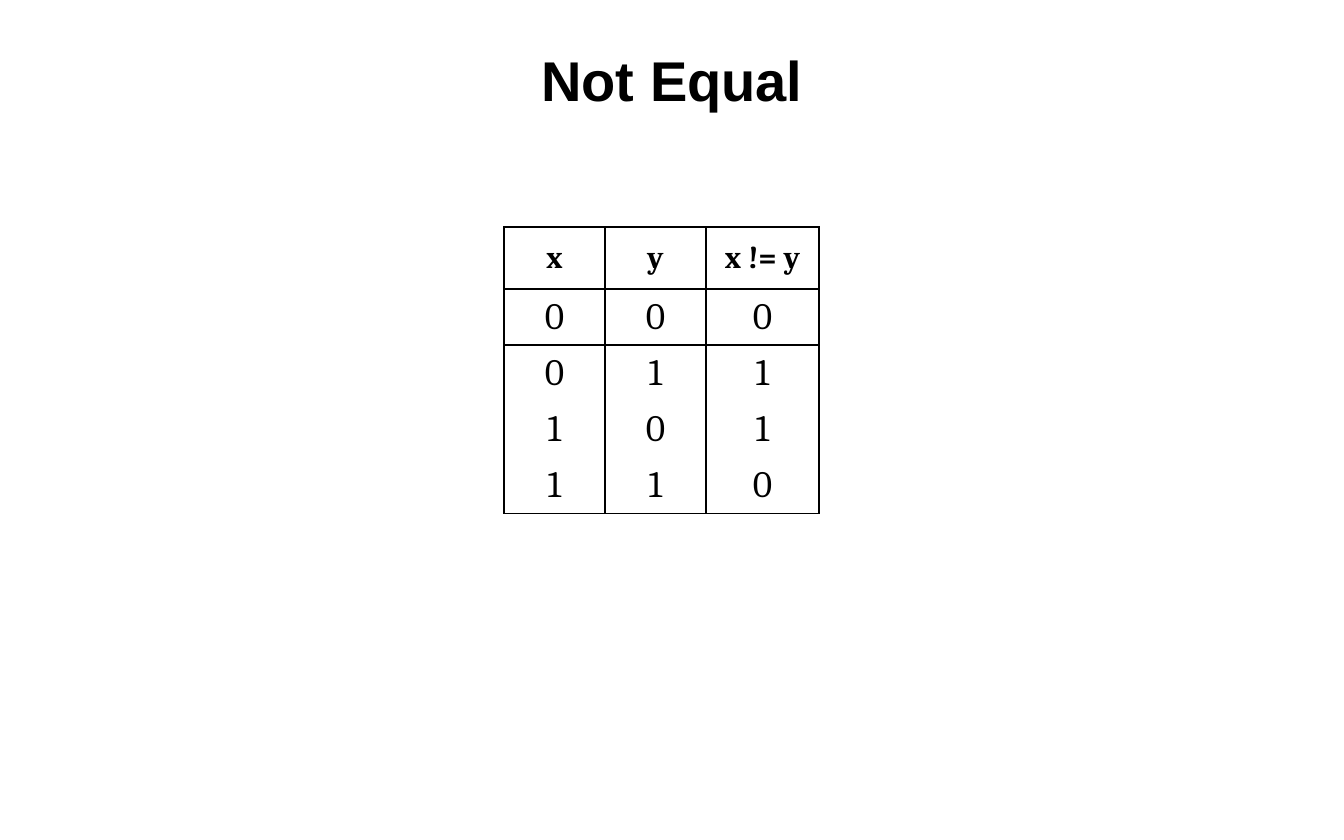
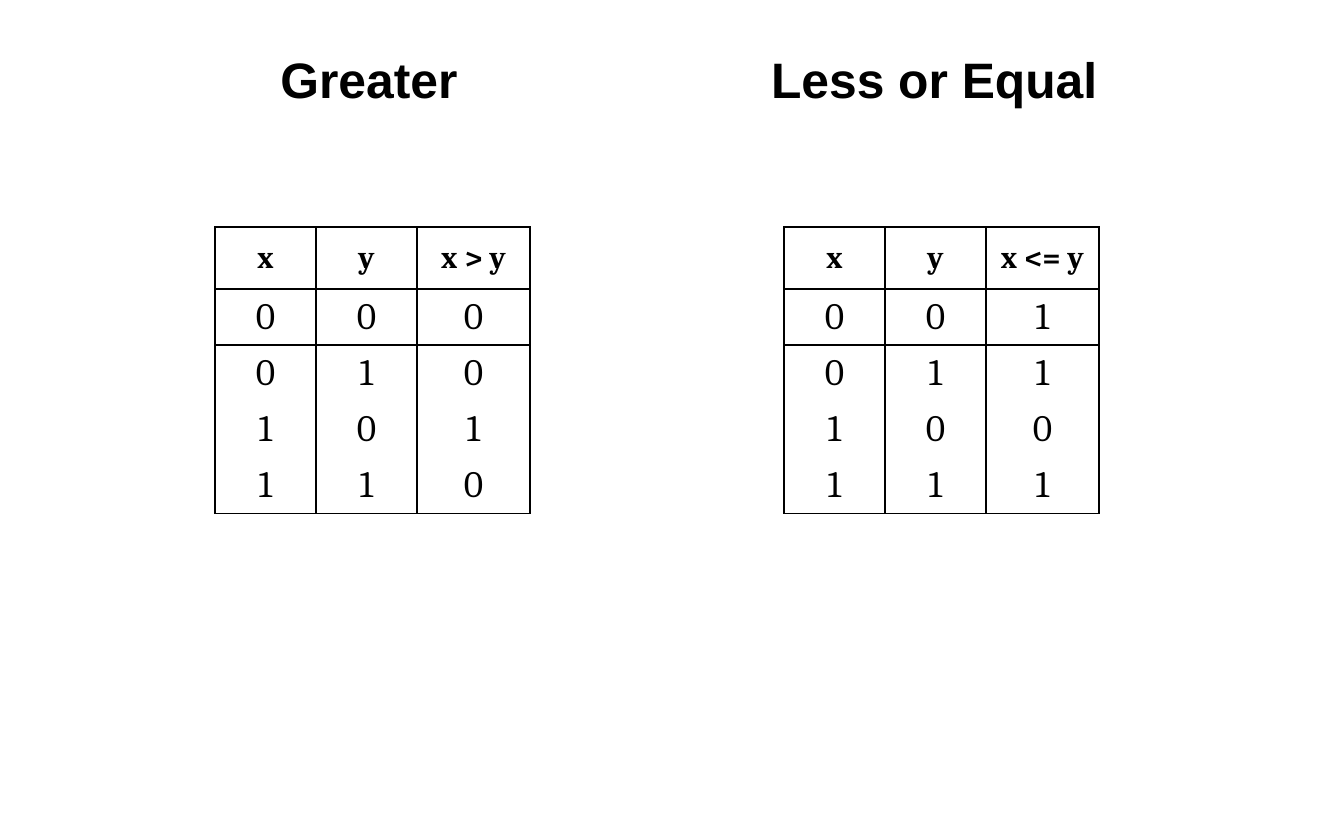
"""Build two slides of truth tables for comparison operators."""
from lxml import etree
from pptx import Presentation
from pptx.dml.color import RGBColor
from pptx.enum.text import MSO_ANCHOR, PP_ALIGN
from pptx.oxml.ns import qn
from pptx.util import Pt

CENTER = PP_ALIGN.CENTER
MIDDLE = MSO_ANCHOR.MIDDLE

SLIDES = [
    [
        {"heading": "Not Equal", "heading_left": 0, "heading_width": 1344, "heading_size": 36,
         "table_left": 504, "operation": "x != y", "results": "0110"},
    ],
    [
        {"heading": "Greater", "heading_left": 112, "heading_width": 514, "heading_size": 32,
         "table_left": 215, "operation": "x > y", "results": "0010"},
        {"heading": "Less or Equal", "heading_left": 579, "heading_width": 711, "heading_size": 32,
         "table_left": 784, "operation": "x <= y", "results": "1101"},
    ],
]
INPUTS = ["00", "01", "10", "11"]

SCALE = 914400 / 112
SLIDE_WIDTH, SLIDE_HEIGHT = 1344, 840
HEADING_TOP, HEADING_HEIGHT = 37, 84
TABLE_TOP = 227
COLUMN_WIDTHS = [101, 101, 113]
ROW_HEIGHTS = [62] + [56] * len(INPUTS)

INK = "000000"
PLAIN_TABLE_STYLE = "{2D5ABB26-0587-4C30-8999-92F81FD0307C}"
HEADER_FONT = {"name": "Cambria", "size": Pt(20), "bold": True}
VALUE_FONT = {"name": "Cambria", "size": Pt(24), "bold": False}


def px(length):
    """Convert px to EMU."""
    return round(length * SCALE)


def color(value):
    """Convert a hex string to a colour."""
    return RGBColor.from_string(value)


def write(frame, text, font_values, space_before=0):
    """Put one centred paragraph into a text frame."""
    paragraph = frame.paragraphs[0]
    paragraph.alignment = CENTER
    paragraph.space_before = Pt(space_before)
    run = paragraph.add_run()
    run.text = text
    for name, value in font_values.items():
        setattr(run.font, name, value)
    run.font.color.rgb = color(INK)


def add_heading(slide, panel):
    """Add the heading above a truth table."""
    box = slide.shapes.add_textbox(px(panel["heading_left"]), px(HEADING_TOP),
                                   px(panel["heading_width"]), px(HEADING_HEIGHT))
    frame = box.text_frame
    frame.word_wrap = True
    frame.vertical_anchor = MIDDLE
    write(frame, panel["heading"],
          {"name": "Arial", "size": Pt(panel["heading_size"]), "bold": True})


def add_borders(cell, sides):
    """Draw 1 pt lines on the given sides of a cell."""
    properties = cell._tc.get_or_add_tcPr()
    for side in sides:
        line = etree.SubElement(properties, qn(f"a:ln{side}"), w=str(Pt(1)))
        fill = etree.SubElement(line, qn("a:solidFill"))
        etree.SubElement(fill, qn("a:srgbClr"), val=INK)


def add_truth_table(slide, panel):
    """Add a bordered truth table for one operation."""
    rows = [["x", "y", panel["operation"]]]
    rows += [[*inputs, result] for inputs, result in zip(INPUTS, panel["results"])]
    graphic_frame = slide.shapes.add_table(
        len(rows), len(COLUMN_WIDTHS), px(panel["table_left"]), px(TABLE_TOP),
        px(sum(COLUMN_WIDTHS)), px(sum(ROW_HEIGHTS)))
    table = graphic_frame.table
    table.first_row = table.horz_banding = False
    for style in graphic_frame._element.iter(qn("a:tableStyleId")):
        style.text = PLAIN_TABLE_STYLE
    for column, width in zip(table.columns, COLUMN_WIDTHS):
        column.width = px(width)
    for row, height in zip(table.rows, ROW_HEIGHTS):
        row.height = px(height)
    for row_index, values in enumerate(rows):
        header = row_index == 0
        sides = ["L", "R"]
        if row_index <= 1:
            sides.append("T")
        if header or row_index == len(rows) - 1:
            sides.append("B")
        for column_index, value in enumerate(values):
            cell = table.cell(row_index, column_index)
            cell.vertical_anchor = MIDDLE
            add_borders(cell, sides)
            cell.fill.background()
            write(cell.text_frame, value, HEADER_FONT if header else VALUE_FONT,
                  6 if header else 12)


def main():
    """Build and save the presentation."""
    presentation = Presentation()
    presentation.slide_width = px(SLIDE_WIDTH)
    presentation.slide_height = px(SLIDE_HEIGHT)
    for panels in SLIDES:
        slide = presentation.slides.add_slide(presentation.slide_layouts[6])
        for panel in panels:
            add_heading(slide, panel)
            add_truth_table(slide, panel)
    presentation.save("out.pptx")


if __name__ == "__main__":
    main()
